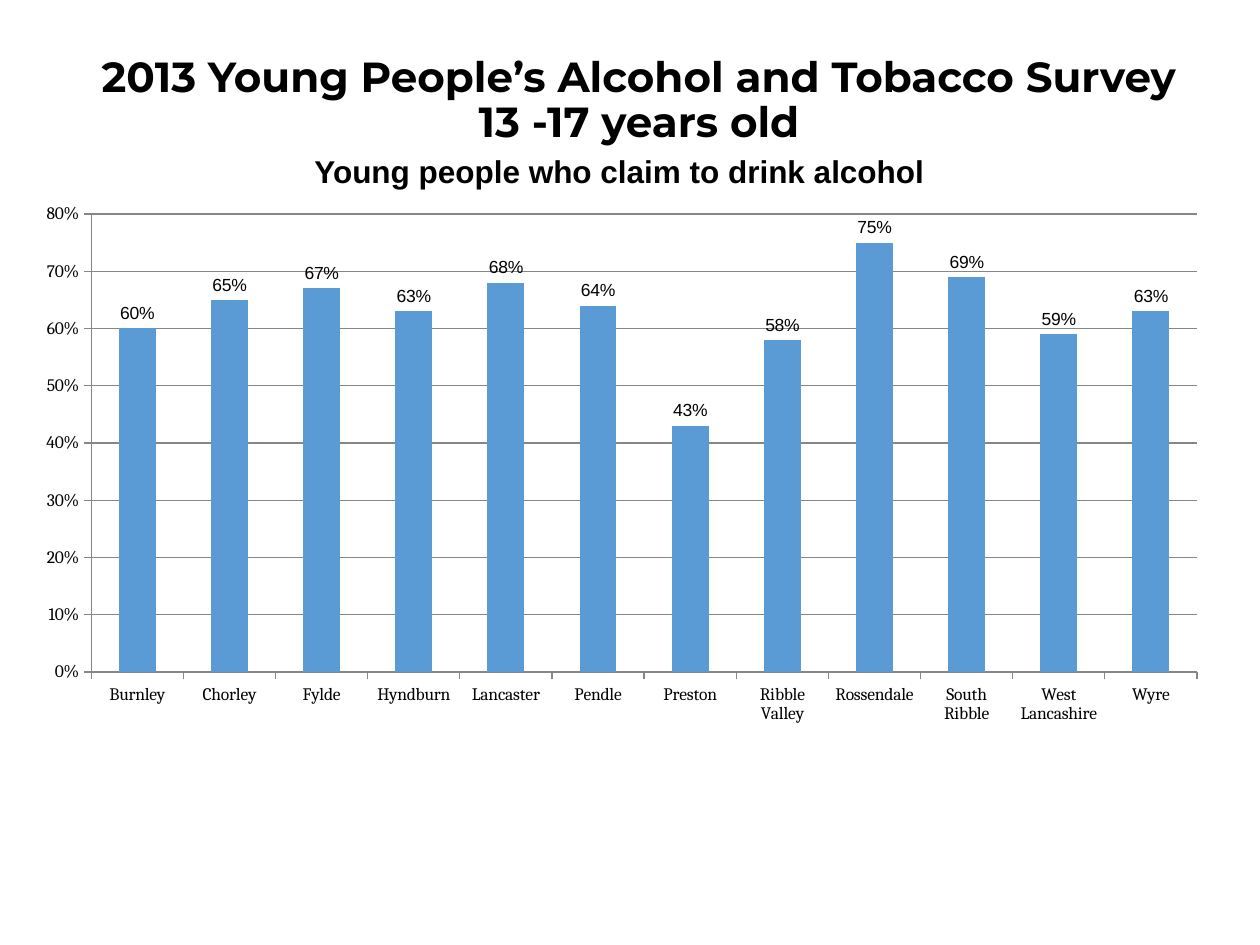
from lxml import etree
from pptx import Presentation
from pptx.chart.data import CategoryChartData
from pptx.dml.color import RGBColor
from pptx.enum.chart import XL_CHART_TYPE as ChartType
from pptx.enum.chart import XL_LABEL_POSITION as LabelPosition
from pptx.enum.chart import XL_TICK_MARK as TickMark
from pptx.enum.text import MSO_ANCHOR as Anchor
from pptx.enum.text import PP_ALIGN as Align
from pptx.oxml.ns import qn
from pptx.util import Pt

PX = 914400 // 126
BLACK, GRAY, BLUE = "000000", "868686", "5B9BD5"

DRINKERS = {
    "Burnley": 0.60, "Chorley": 0.65, "Fylde": 0.67, "Hyndburn": 0.63,
    "Lancaster": 0.68, "Pendle": 0.64, "Preston": 0.43, "Ribble Valley": 0.58,
    "Rossendale": 0.75, "South Ribble": 0.69, "West Lancashire": 0.59, "Wyre": 0.63,
}


def px(*lengths):
    return [length * PX for length in lengths]


def color(value):
    return RGBColor.from_string(value)


def set_font(font, name, size, bold=False):
    font.name, font.size, font.bold = name, Pt(size), bold
    font.color.rgb = color(BLACK)


def add_text(page, area, lines, font_name, size, align, spacing=1.0):
    box = page.shapes.add_textbox(*px(*area))
    frame = box.text_frame
    frame.word_wrap = True
    frame.vertical_anchor = Anchor.TOP
    para = frame.paragraphs[0]
    para.alignment, para.line_spacing = align, spacing
    for index, line in enumerate(lines):
        if index:
            para.add_line_break()
        span = para.add_run()
        span.text = line
        set_font(span.font, font_name, size, bold=True)


def style_axis(axis):
    axis.major_tick_mark = TickMark.OUTSIDE
    axis.minor_tick_mark = TickMark.NONE
    axis.format.line.color.rgb = color(GRAY)
    axis.format.line.width = Pt(0.75)
    set_font(axis.tick_labels.font, "Cambria", 10)


def place_plot(chart, **fractions):
    """Fix the inner plot area, as fractions of the chart frame."""
    area = chart.element.find(".//" + qn("c:plotArea"))
    layout = area.find(qn("c:layout"))
    if layout is None:
        layout = etree.Element(qn("c:layout"))
        area.insert(0, layout)
    manual = etree.SubElement(layout, qn("c:manualLayout"))
    settings = {"layoutTarget": "inner", "xMode": "edge", "yMode": "edge", **fractions}
    for tag, value in settings.items():
        etree.SubElement(manual, qn("c:" + tag)).set("val", str(value))


def add_column_chart(page, area, values):
    data = CategoryChartData(number_format="0%")
    data.categories = list(values)
    data.add_series("Series 1", list(values.values()))
    chart = page.shapes.add_chart(ChartType.COLUMN_CLUSTERED, *px(*area), data).chart
    chart.has_legend = chart.has_title = False
    set_font(chart.font, "Cambria", 10)
    place_plot(chart, x=0.057, y=0.037, w=0.923, h=0.845)

    # Axes and gridlines
    style_axis(chart.category_axis)
    scale = chart.value_axis
    style_axis(scale)
    scale.minimum_scale, scale.maximum_scale, scale.major_unit = 0, 0.8, 0.1
    scale.tick_labels.number_format = "0%"
    scale.tick_labels.number_format_is_linked = False
    scale.has_major_gridlines = True
    scale.major_gridlines.format.line.color.rgb = color(GRAY)
    scale.major_gridlines.format.line.width = Pt(0.75)

    # Columns and their labels
    plot = chart.plots[0]
    plot.gap_width, plot.vary_by_categories = 150, False
    fill = plot.series[0].format.fill
    fill.solid()
    fill.fore_color.rgb = color(BLUE)
    plot.has_data_labels = True
    labels = plot.data_labels
    labels.show_value = True
    labels.position = LabelPosition.OUTSIDE_END
    labels.number_format, labels.number_format_is_linked = "0%", False
    set_font(labels.font, "Arial", 10)


def main():
    deck = Presentation()
    deck.slide_width, deck.slide_height = px(1260, 945)
    page = deck.slides.add_slide(deck.slide_layouts[6])

    add_column_chart(page, (23, 194, 1198, 542), DRINKERS)
    # Chart heading
    add_text(page, (302, 146, 660, 50), ["Young people who claim to drink alcohol"],
             "Arial", 18, Align.LEFT)
    # Slide title
    add_text(page, (45, 50, 1188, 134),
             ["2013 Young People’s Alcohol and Tobacco Survey", "13 -17 years old"],
             "Montserrat", 24, Align.CENTER, 0.9)
    deck.save("out.pptx")


if __name__ == "__main__":
    main()
